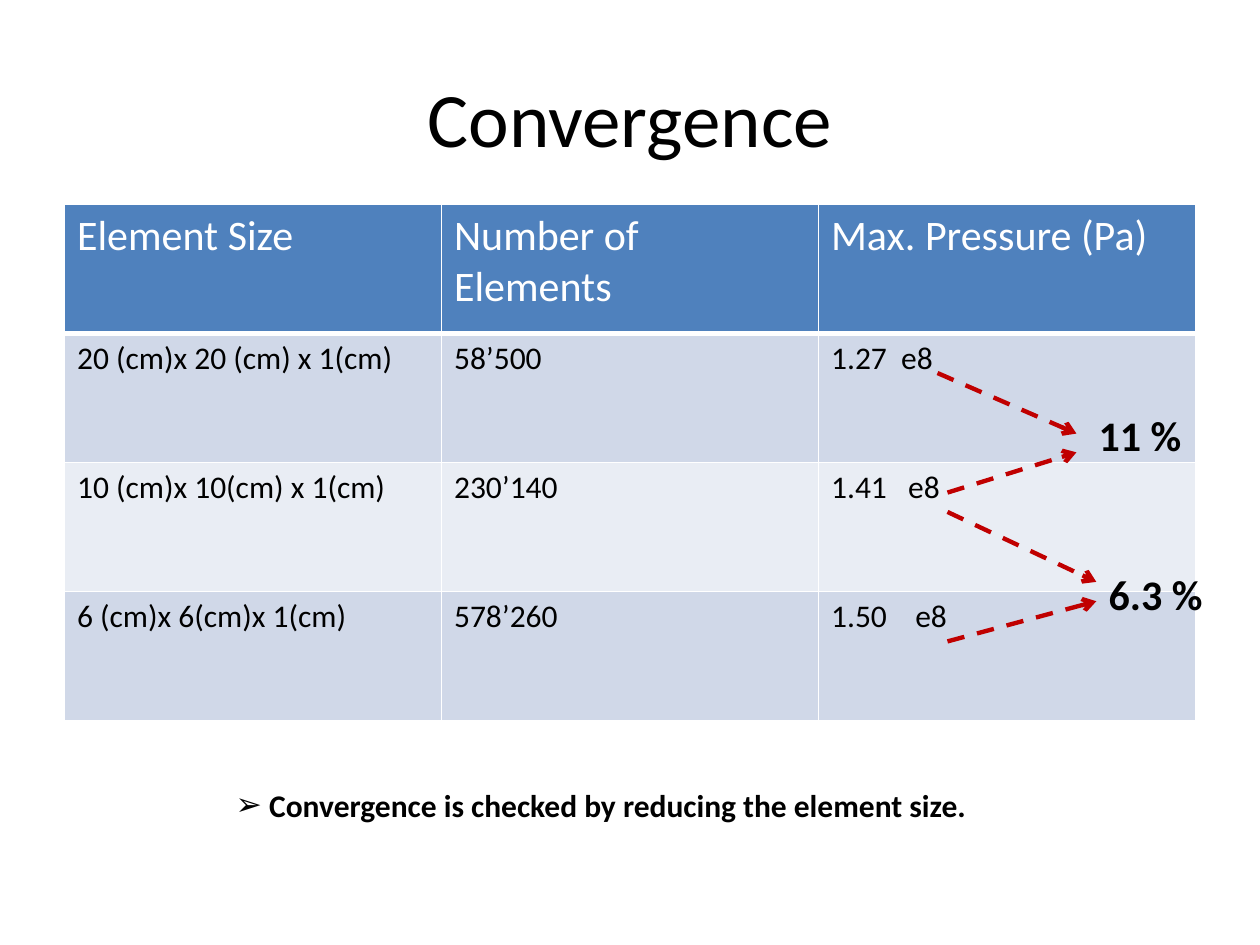
from lxml import etree
from pptx import Presentation
from pptx import util as u
from pptx.dml import color
from pptx.enum import dml, shapes, text
from pptx.oxml import ns


def rgb(value):
    return color.RGBColor.from_string(value)


def write(frame, content, size=18, bold=False, ink="000000", align=None):
    para = frame.paragraphs[0]
    para.alignment = align
    span = para.add_run()
    span.text = content
    span.font.name = "Calibri"
    span.font.size = u.Pt(size)
    span.font.bold = bold
    span.font.color.rgb = rgb(ink)
    return para


deck = Presentation()
deck.slide_width, deck.slide_height = u.Cm(25.4), u.Cm(19.05)
page = deck.slides.add_slide(deck.slide_layouts[5])

# Title
title = page.shapes.title
title.left, title.top = u.Cm(1.27), u.Cm(0.76)
title.width, title.height = u.Cm(22.86), u.Cm(3.18)
title.text_frame.vertical_anchor = text.MSO_ANCHOR.MIDDLE
write(title.text_frame, "Convergence", size=44, align=text.PP_ALIGN.CENTER)

# Table of results
rows = [
    ("Element Size", "Number of Elements", "Max. Pressure (Pa)"),
    ("20 (cm)x 20 (cm) x 1(cm)", "58’500", "1.27  e8"),
    ("10 (cm)x 10(cm) x 1(cm)", "230’140", "1.41   e8"),
    ("6 (cm)x 6(cm)x 1(cm)", "578’260", "1.50    e8"),
]
row_fills = ["4F81BD", "D0D8E8", "E9EDF4", "D0D8E8"]
table = page.shapes.add_table(
    4, 3, u.Cm(1.3), u.Cm(4.12), u.Cm(22.8), u.Cm(10.4)).table
for row_index, values in enumerate(rows):
    header = row_index == 0
    for column_index, value in enumerate(values):
        cell = table.cell(row_index, column_index)
        write(cell.text_frame, value, size=24 if header else 18,
              ink="FFFFFF" if header else "000000")
        properties = cell._tc.get_or_add_tcPr()
        for side in ("lnL", "lnR", "lnT", "lnB"):
            width = u.Pt(3 if header and side == "lnB" else 1)
            border = etree.SubElement(properties, ns.qn(f"a:{side}"), w=str(width))
            paint = etree.SubElement(border, ns.qn("a:solidFill"))
            etree.SubElement(paint, ns.qn("a:srgbClr"), val="FFFFFF")
        cell.fill.solid()
        cell.fill.fore_color.rgb = rgb(row_fills[row_index])

# Dashed arrows from each pressure to the change between steps
arrows = [
    (18.9, 7.52, 21.7, 8.74),
    (19.1, 9.93, 21.7, 9.12),
    (19.1, 10.32, 22.1, 11.73),
    (19.1, 12.93, 22.1, 12.12),
]
for ends in arrows:
    arrow = page.shapes.add_connector(
        shapes.MSO_CONNECTOR.STRAIGHT, *[u.Cm(end) for end in ends])
    arrow.line.color.rgb = rgb("C00000")
    arrow.line.width = u.Pt(2.5)
    arrow.line.dash_style = dml.MSO_LINE.DASH
    etree.SubElement(arrow.line._get_or_add_ln(), ns.qn("a:tailEnd"), type="arrow")
    etree.SubElement(arrow._element.spPr, ns.qn("a:effectLst"))

# Percentage changes
for left, top, change in [(21.9, 8.13, "11 %"), (22.1, 11.33, "6.3 %")]:
    box = page.shapes.add_textbox(u.Cm(left), u.Cm(top), u.Cm(2.6), u.Cm(1.28))
    box.text_frame.word_wrap = True
    write(box.text_frame, change, size=24, bold=True)

# Closing remark
remark = page.shapes.add_textbox(u.Cm(4.5), u.Cm(15.72), u.Cm(15.32), u.Cm(1.03))
remark.text_frame.word_wrap = False
write(remark.text_frame, " ")
para = write(remark.text_frame,
             "Convergence is checked by reducing the element size.", bold=True)
bullet = para._p.get_or_add_pPr()
etree.SubElement(bullet, ns.qn("a:buFont"), typeface="Wingdings")
bullet[-1].set("typeface", "Calibri")
etree.SubElement(bullet, ns.qn("a:buChar"), char="➢")

deck.save("out.pptx")
